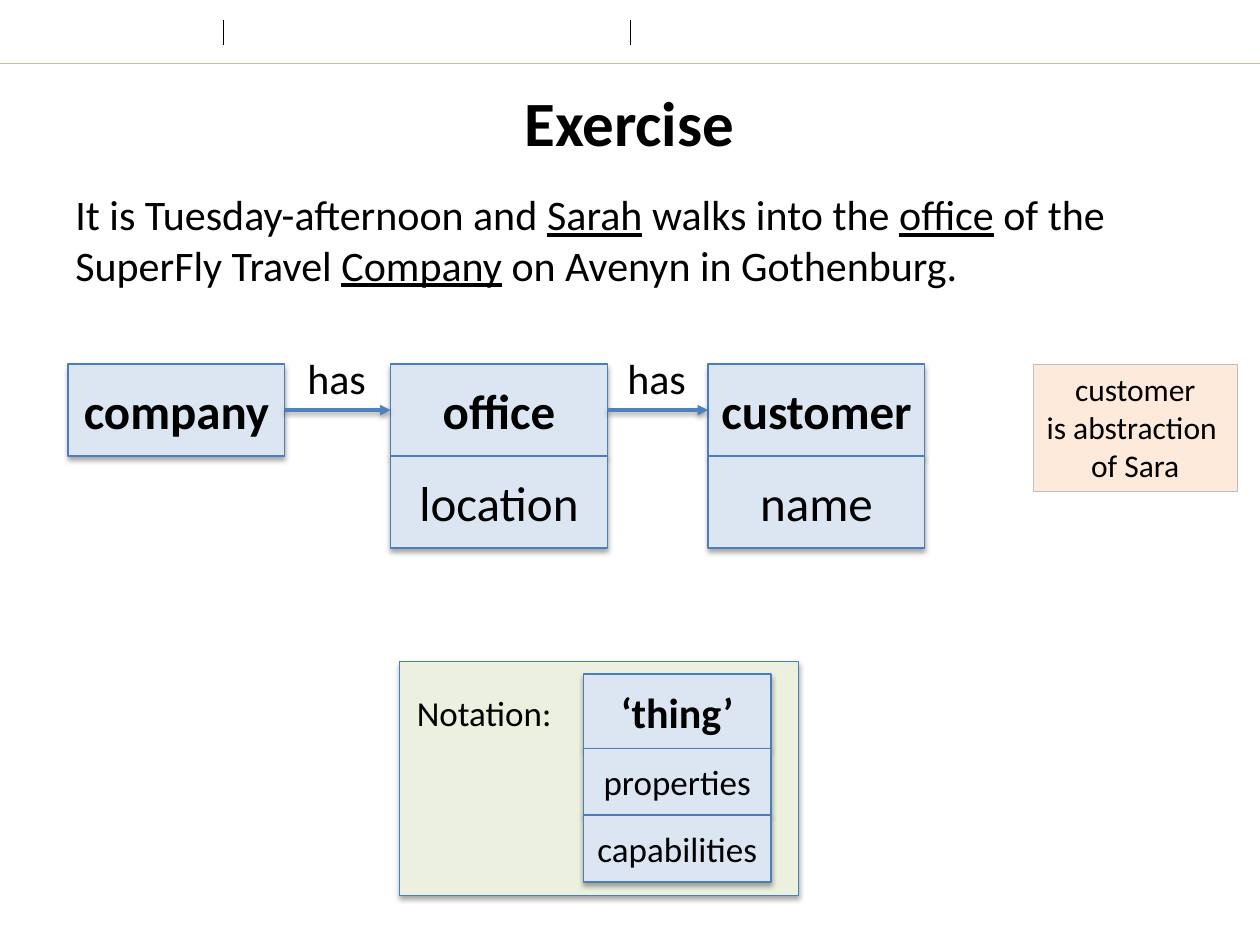
"""Build the exercise slide: a sentence, its domain model and the notation key."""
import pptx
import pptx.util
import pptx.dml.color
import pptx.enum.shapes
import pptx.enum.text
import pptx.oxml
import pptx.oxml.ns

THEME = {
    "font": "Calibri", "text": "000000", "box": "DCE6F2", "key": "EBF1DE",
    "note": "FDEADA", "edge": "4B7EBC", "arrow": "4F81BD", "note edge": "BFBFBF",
    "rule": "C4BD97", "title size": 36, "entity size": 28, "body size": 24,
    "key size": 20, "note size": 18,
}
WIDTH, HEIGHT = 10, 7.5
TITLE = "Exercise"
SENTENCE = [
    ("It is Tuesday-afternoon and ", False), ("Sarah", True),
    (" walks into the ", False), ("office", True),
    (" of the SuperFly Travel ", False), ("Company", True),
    (" on Avenyn in Gothenburg.", False),
]
ENTITIES = [(0.54, ["company"]), (3.1, ["office", "location"]), (5.62, ["customer", "name"])]
RELATION = "has"
NOTE = "customer\vis abstraction \vof Sara"
KEY_LABEL = "Notation:"
KEY_ROWS = [("‘thing’", 0.59, "body size"), ("properties", 0.53, "key size"),
            ("capabilities", 0.53, "key size")]
ENTITY_TOP, ENTITY_WIDTH, ENTITY_HEIGHT = 2.89, 1.72, 0.73
LABEL_WIDTH, LABEL_HEIGHT, LABEL_TOP = 0.68, 0.5, 2.75
KEY_FRAME = (3.17, 5.25, 3.17, 1.86)
KEY_LEFT, KEY_TOP, KEY_WIDTH = 4.63, 5.35, 1.49
RULES = [(0, 0.5, WIDTH, 0.5, 0.25, "rule"), (1.77, 0.16, 1.77, 0.36, 0.5, "text"),
         (5, 0.16, 5, 0.36, 0.5, "text")]

ALIGN = pptx.enum.text.PP_ALIGN
ANCHOR = pptx.enum.text.MSO_ANCHOR


def color(name):
    return pptx.dml.color.RGBColor.from_string(THEME[name])


def inches(*values):
    return [pptx.util.Inches(value) for value in values]


def add_effects(item, opacity=0, distance=0):
    properties = item._element.spPr
    for old in properties.findall(pptx.oxml.ns.qn("a:effectLst")):
        properties.remove(old)
    shadow = (f'<a:outerShdw blurRad="{pptx.util.Pt(3.1)}" dist="{pptx.util.Pt(distance)}" '
              f'dir="5400000" rotWithShape="0"><a:srgbClr val="{THEME["text"]}">'
              f'<a:alpha val="{opacity * 1000}"/></a:srgbClr></a:outerShdw>') if opacity else ""
    properties.append(pptx.oxml.parse_xml(
        f'<a:effectLst {pptx.oxml.ns.nsdecls("a")}>{shadow}</a:effectLst>'))


def write(box, spans, size, bold=False, align=ALIGN.CENTER, anchor=ANCHOR.MIDDLE, wrap=True):
    frame = box.text_frame
    frame.word_wrap = wrap
    frame.vertical_anchor = anchor
    if not wrap:
        frame.auto_size = pptx.enum.text.MSO_AUTO_SIZE.SHAPE_TO_FIT_TEXT
    para = frame.paragraphs[0]
    para.alignment = align
    if isinstance(spans, str):
        para.text = spans
    else:
        for text, underlined in spans:
            span = para.add_run()
            span.text = text
            span.font.underline = underlined
    for span in para.runs:
        span.font.name = THEME["font"]
        span.font.size = pptx.util.Pt(THEME[size])
        span.font.bold = bold
        span.font.color.rgb = color("text")


def add_text(page, place, spans, size, **style):
    write(page.shapes.add_textbox(*inches(*place)), spans, size, **style)


def add_box(page, place, fill="box", edge="edge", shadow=True):
    box = page.shapes.add_shape(pptx.enum.shapes.MSO_SHAPE.RECTANGLE, *inches(*place))
    box.fill.solid()
    box.fill.fore_color.rgb = color(fill)
    box.line.color.rgb = color(edge)
    box.line.width = pptx.util.Pt(0.75)
    box.shadow.inherit = False
    if shadow:
        add_effects(box, 35, 1.8)
    return box


def add_line(page, ends, width, name):
    line = page.shapes.add_connector(pptx.enum.shapes.MSO_CONNECTOR.STRAIGHT, *inches(*ends))
    line.line.width = pptx.util.Pt(width)
    line.line.color.rgb = color(name)
    add_effects(line)
    return line


def add_arrow(page, source, target):
    arrow = add_line(page, (0, 0, 1, 0), 2, "arrow")
    arrow.begin_connect(source, 3)
    arrow.end_connect(target, 1)
    arrow.line._get_or_add_ln().append(pptx.oxml.parse_xml(
        f'<a:tailEnd {pptx.oxml.ns.nsdecls("a")} type="triangle"/>'))
    add_effects(arrow, 38, 1.6)


def add_model(page):
    heads = []
    for left, rows in ENTITIES:
        for index, text in enumerate(rows):
            top = ENTITY_TOP + index * ENTITY_HEIGHT
            box = add_box(page, (left, top, ENTITY_WIDTH, ENTITY_HEIGHT))
            write(box, text, "entity size", bold=index == 0)
            if index == 0:
                heads.append((left, box))
    for (left, source), (right, target) in zip(heads, heads[1:]):
        add_arrow(page, source, target)
        label_left = (left + ENTITY_WIDTH + right - LABEL_WIDTH) / 2
        add_text(page, (label_left, LABEL_TOP, LABEL_WIDTH, LABEL_HEIGHT), RELATION,
                 "body size", align=ALIGN.LEFT, anchor=ANCHOR.TOP, wrap=False)


def add_key(page):
    add_box(page, KEY_FRAME, fill="key")
    top = KEY_TOP
    for index, (text, height, size) in enumerate(KEY_ROWS):
        write(add_box(page, (KEY_LEFT, top, KEY_WIDTH, height)), text, size, bold=index == 0)
        top += height
    add_text(page, (3.21, 5.44, 1.28, 0.44), KEY_LABEL, "key size",
             align=ALIGN.LEFT, anchor=ANCHOR.TOP, wrap=False)


def main():
    deck = pptx.Presentation()
    deck.slide_width, deck.slide_height = inches(WIDTH, HEIGHT)
    page = deck.slides.add_slide(deck.slide_layouts[6])
    for *ends, width, name in RULES:
        add_line(page, ends, width, name)
    add_text(page, (0.5, 1.45, 9, 0.94), SENTENCE, "body size",
             align=ALIGN.LEFT, anchor=ANCHOR.TOP)
    add_text(page, (0.02, 0.58, 9.95, 0.76), TITLE, "title size", bold=True)
    add_model(page)
    add_key(page)
    note = add_box(page, (8.2, ENTITY_TOP, 1.62, 1.01), "note", "note edge", shadow=False)
    write(note, NOTE, "note size", anchor=ANCHOR.TOP, wrap=False)
    deck.save("out.pptx")


if __name__ == "__main__":
    main()
